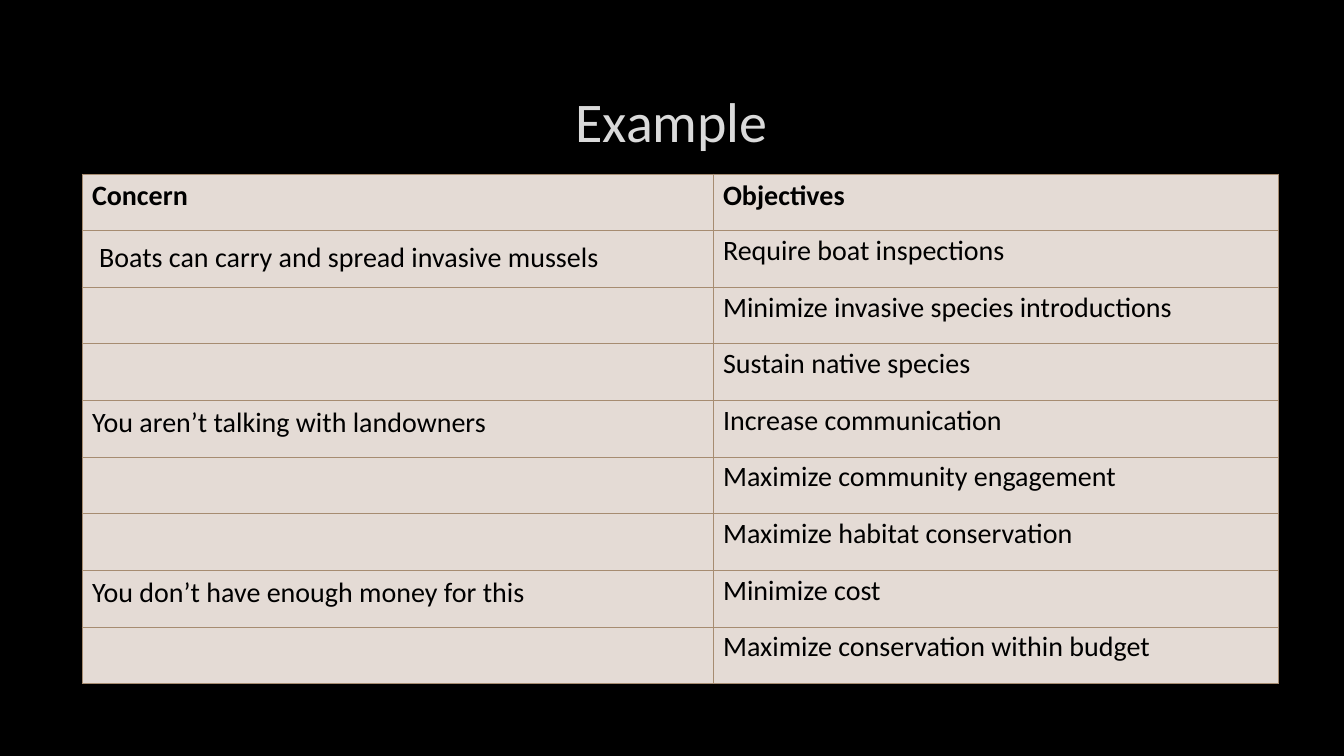
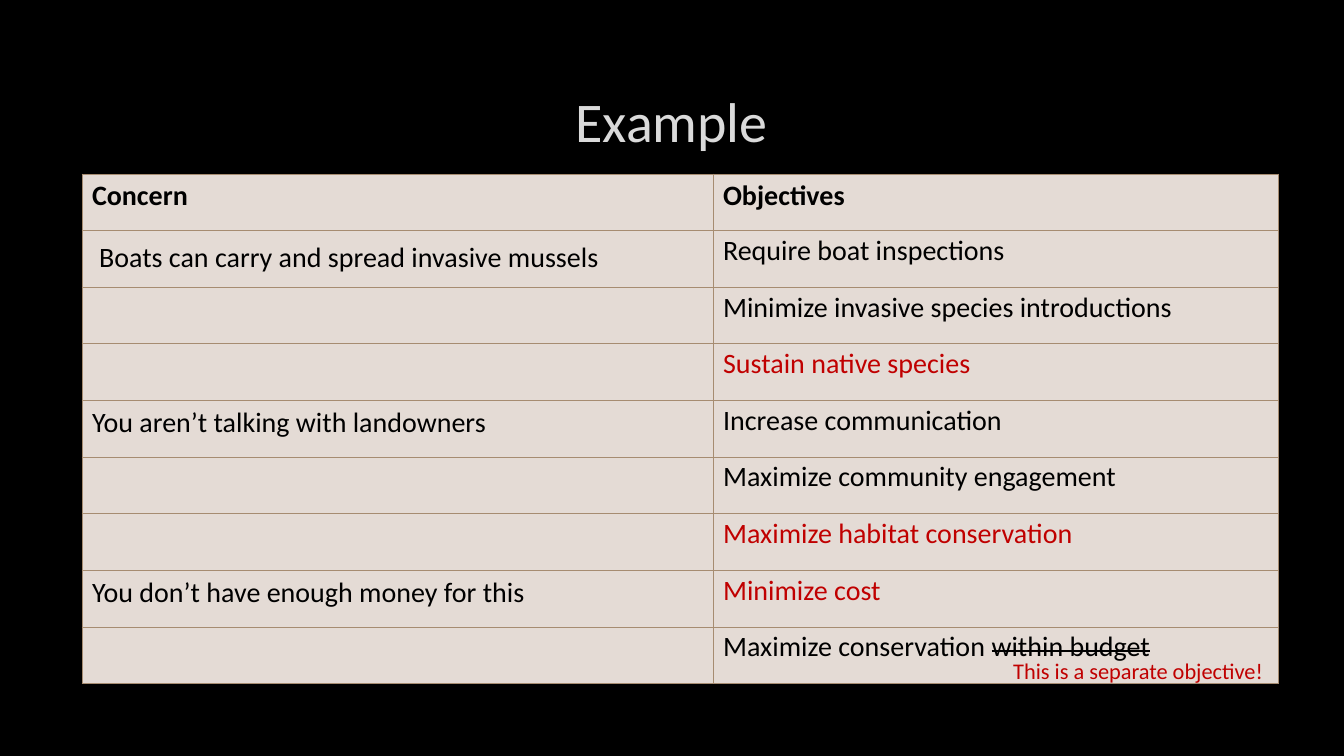
from pptx import Presentation
from pptx.dml.color import RGBColor as RGB
from pptx.enum.text import MSO_ANCHOR as Anchor, PP_ALIGN as Align
from pptx.oxml import parse_xml
from pptx.oxml.ns import nsdecls
from pptx.util import Pt

PX = 914400 / 100.8
HUES = {"back": "000000", "title": "DADADA", "cell": "E4DBD5",
        "edge": "A68C71", "text": "000000", "mark": "C00000"}
BASE = {"name": "Calibri", "size": Pt(20), "bold": False}

# Table content: concern, objective
HEAD = ("Concern", "Objectives")
BOATS = "Boats can carry and spread invasive mussels"
ROWS = [
    (BOATS, "Require boat inspections"),
    ("", "Minimize invasive species introductions"),
    ("", "Sustain native species"),
    ("You aren’t talking with landowners", "Increase communication"),
    ("", "Maximize community engagement"),
    ("", "Maximize habitat conservation"),
    ("You don’t have enough money for this", "Minimize cost"),
    ("", "Maximize conservation within budget"),
]
MARKS = {"Sustain native species", "Maximize habitat conservation", "Minimize cost"}
CUT = "within budget"


def px(*vals):
    return [round(v * PX) for v in vals]


class Deck:
    def __init__(self):
        self.prs = Presentation()
        self.prs.slide_width, self.prs.slide_height = px(1344, 756)

    def page(self, title):
        self.slide = self.prs.slides.add_slide(self.prs.slide_layouts[6])
        fill = self.slide.background.fill
        fill.solid()
        fill.fore_color.rgb = RGB.from_string(HUES["back"])
        self.text(title, (101, 67, 1141, 107), "title", Align.CENTER,
                  anchor=Anchor.MIDDLE, size=Pt(40))

    def run(self, para, text, hue="text", strike=False, **form):
        run = para.add_run()
        run.text = text
        for key, val in {**BASE, **form}.items():
            setattr(run.font, key, val)
        run.font.color.rgb = RGB.from_string(HUES[hue])
        if strike:
            run.font._element.set("strike", "sngStrike")

    def text(self, text, spot, hue, align, anchor=Anchor.TOP, space=1.0, **form):
        frame = self.slide.shapes.add_textbox(*px(*spot)).text_frame
        frame.word_wrap, frame.vertical_anchor = True, anchor
        para = frame.paragraphs[0]
        para.alignment, para.line_spacing = align, space
        self.run(para, text, hue, **form)

    def cell(self, cell):
        # Borders come before the fill
        props = cell._tc.get_or_add_tcPr()
        for side in "LRTB":
            props.append(parse_xml(
                f'<a:ln{side} {nsdecls("a")} w="9525"><a:solidFill>'
                f'<a:srgbClr val="{HUES["edge"]}"/></a:solidFill></a:ln{side}>'))
        cell.fill.solid()
        cell.fill.fore_color.rgb = RGB.from_string(HUES["cell"])
        return cell.text_frame.paragraphs[0]

    def table(self, head, rows, marks=(), cut=None):
        size = len(rows) + 1, len(head)
        table = self.slide.shapes.add_table(*size, *px(82, 174, 1196, 510)).table
        table.first_row = table.horz_banding = False
        for col, wide in zip(table.columns, px(631, 565)):
            col.width = wide
        for r, row in enumerate([head, *rows]):
            for c, text in enumerate(row):
                para = self.cell(table.cell(r, c))
                if r and c:
                    para.line_spacing = 0.9
                if text == BOATS:
                    para.line_spacing = 1.15
                    para._p.get_or_add_pPr().set("marL", str(px(7)[0]))
                hue = "mark" if text in marks else "text"
                parts = text.partition(cut) if cut else (text,)
                for part in filter(None, parts):
                    self.run(para, part, hue, strike=part == cut, bold=r == 0)


def main():
    deck = Deck()

    # Concerns turned into objectives
    deck.page("Example")
    deck.table(HEAD, ROWS)

    # The same table with its marks
    deck.page("Example")
    deck.table(HEAD, ROWS, MARKS, CUT)
    deck.text("This is a separate objective!", (601, 655, 672, 34), "mark",
              Align.RIGHT, space=0.9, size=Pt(16))

    deck.prs.save("out.pptx")


if __name__ == "__main__":
    main()
